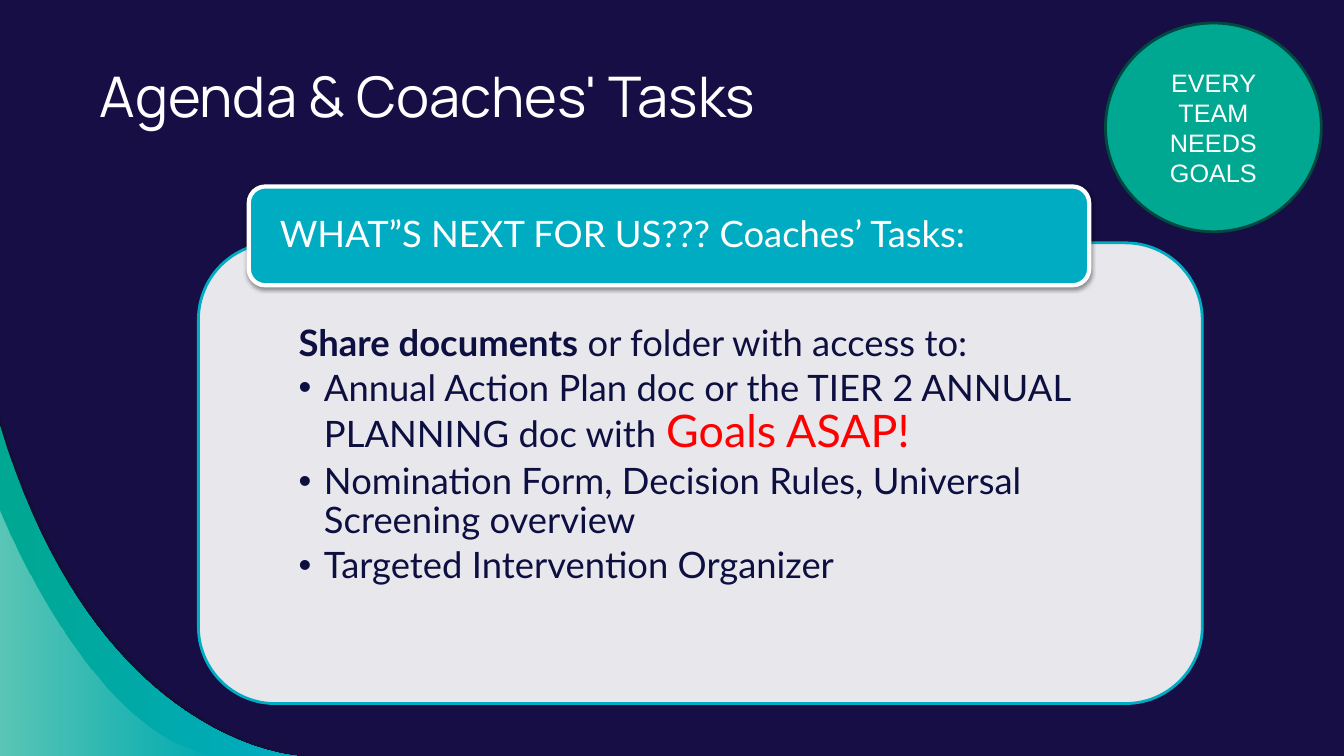
from dataclasses import dataclass

from lxml.etree import SubElement
from pptx import Presentation
from pptx.dml.color import RGBColor as Rgb
from pptx.enum.shapes import MSO_SHAPE as Form
from pptx.enum.text import MSO_ANCHOR as Anchor, PP_ALIGN as Align
from pptx.oxml.ns import qn
from pptx.shapes.autoshape import Shape
from pptx.text.text import TextFrame
from pptx.util import Cm, Pt

NAVY = Rgb(0x16, 0x0E, 0x44)
INK = Rgb(0x0D, 0x0F, 0x41)
DUSK = Rgb(0x12, 0x10, 0x2F)
CYAN = Rgb(0x00, 0xAC, 0xC2)
TEAL = Rgb(0x00, 0xA7, 0x91)
PINE = Rgb(0x00, 0x49, 0x40)
WHITE = Rgb(0xFF, 0xFF, 0xFF)
RED = Rgb(0xFF, 0x00, 0x00)
WIDE, HIGH = 33.87, 19.05
STEPS = 40


@dataclass
class Tint:
    color: Rgb
    alpha: int = 100


@dataclass
class Wave:
    curve: list[tuple[float, float]]  # four Bezier points in cm
    tints: list[Tint]  # one for solid, two from left to right


@dataclass
class Box:
    form: Form
    left: float
    top: float
    width: float
    height: float
    tint: Tint
    edge: Rgb
    weight: float


@dataclass
class Span:
    text: str
    size: int = 26
    color: Rgb = INK
    font: str = "Lato"
    bold: bool = False


@dataclass
class Para:
    spans: list[Span]
    bullet: bool = False


WAVES = [
    Wave([(0, 10.49), (2.49, 18.77), (7.7, HIGH), (7.7, HIGH)], [Tint(DUSK, 54)]),
    Wave([(0, 10.72), (2.41, 18.77), (7.49, HIGH), (7.49, HIGH)],
         [Tint(TEAL), Tint(CYAN)]),
    Wave([(0, 12.85), (0, 12.85), (2.31, 18.67), (5.49, HIGH)],
         [Tint(WHITE, 36), Tint(WHITE, 0)]),
]
PANEL = Box(Form.ROUNDED_RECTANGLE, 5, 6.12, 25.3, 11.61, Tint(WHITE, 90), CYAN, 2)
HEAD = Box(Form.ROUNDED_RECTANGLE, 6.27, 4.7, 21.18, 2.49, Tint(CYAN), WHITE, 3)
BADGE = Box(Form.OVAL, 27.86, 0.58, 5.44, 5.26, Tint(TEAL), PINE, 2)
TASKS = [
    Para([Span("Share documents", bold=True),
          Span(" or folder with access to:")]),
    Para([Span("Annual Action Plan doc or the TIER 2 ANNUAL PLANNING doc with "),
          Span("Goals ASAP!", 32, RED)], True),
    Para([Span("Nomination Form, Decision Rules, Universal Screening overview")], True),
    Para([Span("Targeted Intervention Organizer")], True),
]


def paint(color, tint: Tint) -> None:
    color.rgb = tint.color


def fade(shape: Shape, tints: list[Tint]) -> None:
    """Set the opacity of each fill colour in turn."""
    for node, tint in zip(shape._element.spPr.iter(qn("a:srgbClr")), tints):
        if tint.alpha < 100:
            SubElement(node, qn("a:alpha"), val=str(tint.alpha * 1000))


def add_wave(shapes, wave: Wave) -> None:
    points = []
    for step in range(STEPS + 1):
        t = step / STEPS
        parts = ((1 - t) ** 3, 3 * t * (1 - t) ** 2, 3 * t * t * (1 - t), t ** 3)
        points.append(tuple(Cm(sum(k * p[axis] for k, p in zip(parts, wave.curve)))
                            for axis in (0, 1)))
    pen = shapes.build_freeform(*points[0])
    pen.add_line_segments(points[1:] + [(0, Cm(HIGH))], close=True)
    shape = pen.convert_to_shape()
    shape.shadow.inherit = False
    shape.line.fill.background()
    if len(wave.tints) == 1:
        shape.fill.solid()
        paint(shape.fill.fore_color, wave.tints[0])
    else:
        shape.fill.gradient()
        shape.fill.gradient_angle = 0
        for stop, tint in zip(shape.fill.gradient_stops, wave.tints):
            paint(stop.color, tint)
    fade(shape, wave.tints)


def add_box(shapes, box: Box) -> Shape:
    shape = shapes.add_shape(box.form, Cm(box.left), Cm(box.top),
                             Cm(box.width), Cm(box.height))
    shape.shadow.inherit = False
    shape.fill.solid()
    paint(shape.fill.fore_color, box.tint)
    fade(shape, [box.tint])
    shape.line.color.rgb = box.edge
    shape.line.width = Pt(box.weight)
    return shape


def set_frame(frame: TextFrame, anchor: Anchor, left: float, top: float,
              base: float) -> None:
    frame.word_wrap = True
    frame.vertical_anchor = anchor
    frame.margin_left = frame.margin_right = Cm(left)
    frame.margin_top, frame.margin_bottom = Cm(top), Cm(base)


def add_spans(para, spans: list[Span], align: Align = Align.LEFT) -> None:
    para.alignment = align
    for span in spans:
        run = para.add_run()
        run.text = span.text
        run.font.name = span.font
        run.font.size = Pt(span.size)
        run.font.bold = span.bold
        run.font.color.rgb = span.color


def add_glow(shape: Shape) -> None:
    """Cast a soft shadow straight down."""
    effect = shape._element.spPr.find(qn("a:effectLst"))
    drop = SubElement(effect, qn("a:outerShdw"), blurRad=str(Pt(3.1)),
                      dist=str(Pt(1.6)), dir="5400000", rotWithShape="0")
    color = SubElement(drop, qn("a:srgbClr"), val="000000")
    SubElement(color, qn("a:alpha"), val="38000")


def main() -> None:
    deck = Presentation()
    deck.slide_width, deck.slide_height = Cm(WIDE), Cm(HIGH)
    slide = deck.slides.add_slide(deck.slide_layouts[6])
    slide.background.fill.solid()
    slide.background.fill.fore_color.rgb = NAVY
    shapes = slide.shapes

    # Corner waves
    for wave in WAVES:
        add_wave(shapes, wave)

    # Task panel
    frame = add_box(shapes, PANEL).text_frame
    set_frame(frame, Anchor.TOP, 1.96, 1.5, 0.51)
    for index, task in enumerate(TASKS):
        para = frame.add_paragraph() if index else frame.paragraphs[0]
        para.line_spacing = 0.9
        para.space_after = Pt(4)
        add_spans(para, task.spans)
        props = para._p.get_or_add_pPr()
        props.set("marL", str(Cm(0.64)))
        props.set("indent", str(-Cm(0.64)))
        if task.bullet:
            SubElement(props, qn("a:buFont"), typeface="Arial")
            SubElement(props, qn("a:buChar"), char="•")

    # Panel heading
    head = add_box(shapes, HEAD)
    add_glow(head)
    set_frame(head.text_frame, Anchor.MIDDLE, 0.66, 0, 0)
    para = head.text_frame.paragraphs[0]
    para.line_spacing = 0.9
    add_spans(para, [Span("WHAT”S NEXT FOR US??? Coaches’ Tasks:", color=WHITE)])

    # Slide title
    title = shapes.add_textbox(Cm(2.26), Cm(1.3), Cm(26.06), Cm(2.34)).text_frame
    set_frame(title, Anchor.TOP, 0.25, 0.25, 0.25)
    add_spans(title.paragraphs[0],
              [Span("Agenda & Coaches' Tasks", 40, WHITE, "Manrope")])

    # Goal badge
    badge = add_box(shapes, BADGE).text_frame
    set_frame(badge, Anchor.MIDDLE, 0.25, 0.13, 0.13)
    add_spans(badge.paragraphs[0],
              [Span("EVERY TEAM NEEDS GOALS", 18, WHITE, "Arial")], Align.CENTER)

    deck.save("out.pptx")


if __name__ == "__main__":
    main()
